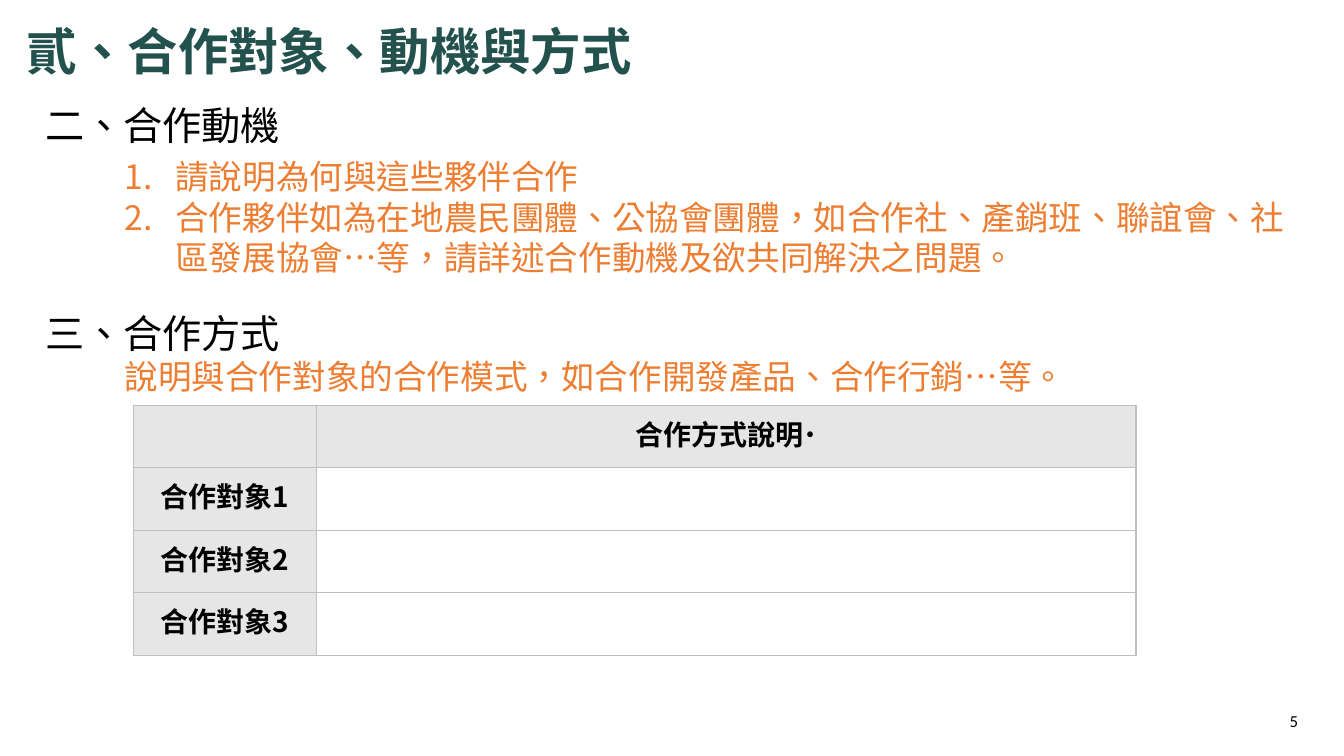
from pptx import Presentation
from pptx import util as u
from pptx.dml.color import RGBColor
from pptx.enum import text as t
from pptx.oxml.ns import qn
from lxml import etree

INK = RGBColor(0x00, 0x00, 0x00)
TEAL = RGBColor(0x23, 0x51, 0x4D)
ORANGE = RGBColor(0xED, 0x7D, 0x31)
GREY = RGBColor(0xE7, 0xE6, 0xE6)
WHITE = RGBColor(0xFF, 0xFF, 0xFF)
EDGE = RGBColor(0xBF, 0xBF, 0xBF)
SANS = "Noto Sans CJK SC"
MID = t.MSO_ANCHOR.MIDDLE
CENTER = t.PP_ALIGN.CENTER


def write(para, words, size, color, bold=False, face=SANS):
    para.line_spacing = u.Pt(round(size * 1.2, 1))
    run = para.add_run()
    run.text = words
    font = run.font
    font.size, font.bold, font.name = u.Pt(size), bold, face
    font.color.rgb = color
    props = run._r.get_or_add_rPr()
    props.set("lang", "zh-TW")
    latin = props.find(qn("a:latin"))
    east = etree.Element(qn("a:ea"), typeface=face)
    latin.addnext(east)


def indent(para, left, first):
    props = para._p.get_or_add_pPr()
    props.set("marL", str(u.Cm(left)))
    props.set("indent", str(u.Cm(first)))
    return props


def add_box(slide, box, wrap=True):
    frame = slide.shapes.add_textbox(*map(u.Cm, box)).text_frame
    frame.word_wrap = wrap
    return frame


def add_line(slide, box, words, size, color, bold=False):
    frame = add_box(slide, box, wrap=False)
    write(frame.paragraphs[0], words, size, color, bold)
    return frame


def add_list(slide, box, items):
    frame = add_box(slide, box)
    for i, words in enumerate(items):
        para = frame.add_paragraph() if i else frame.paragraphs[0]
        props = indent(para, 1.27, -1.27)
        etree.SubElement(props, qn("a:buFont"), typeface="+mj-lt")
        etree.SubElement(props, qn("a:buAutoNum"), type="arabicPeriod")
        write(para, words, 24, ORANGE)


def add_mode(slide, box, head, body):
    frame = add_box(slide, box)
    write(frame.paragraphs[0], head, 28, INK)
    para = frame.add_paragraph()
    indent(para, 0, 2)
    write(para, body, 24, ORANGE)


def style_cell(cell, fill):
    cell.margin_left = cell.margin_right = u.Cm(0.18)
    cell.margin_top = cell.margin_bottom = 0
    cell.vertical_anchor = MID
    props = cell._tc.get_or_add_tcPr()
    for side in ("lnL", "lnR", "lnT", "lnB"):
        line = etree.SubElement(props, qn("a:" + side), w=str(u.Pt(1)))
        solid = etree.SubElement(line, qn("a:solidFill"))
        etree.SubElement(solid, qn("a:srgbClr"), val=str(EDGE))
    cell.fill.solid()
    cell.fill.fore_color.rgb = fill


def add_grid(slide, box, rows, split):
    grid = slide.shapes.add_table(len(rows), 2, *map(u.Cm, box)).table
    wide, high = box[2:]
    grid.columns[0].width = u.Cm(split)
    grid.columns[1].width = u.Cm(wide - split)
    for r, row in enumerate(rows):
        grid.rows[r].height = u.Cm(high / len(rows))
        for c, words in enumerate(row):
            cell = grid.cell(r, c)
            style_cell(cell, GREY if r == 0 or c == 0 else WHITE)
            if words:
                para = cell.text_frame.paragraphs[0]
                para.alignment = CENTER
                write(para, words, 20, INK, True)


def add_page(slide, box, number):
    frame = add_box(slide, box)
    frame.vertical_anchor = MID
    para = frame.paragraphs[0]
    para.alignment = CENTER
    write(para, number, 12, INK, face="Calibri")


def main():
    deck = Presentation()
    deck.slide_width, deck.slide_height = u.Cm(33.87), u.Cm(19.05)
    slide = deck.slides.add_slide(deck.slide_layouts[6])
    add_line(slide, (0.89, 2.44, 6.5, 1.45), "二、合作動機", 28, INK)
    add_list(slide, (2.9, 3.81, 29.72, 3.33), (
        "請說明為何與這些夥伴合作",
        "合作夥伴如為在地農民團體、公協會團體，如合作社、產銷班、聯誼會、"
        "社區發展協會…等，請詳述合作動機及欲共同解決之問題。",
    ))
    add_line(slide, (0.43, 0.38, 16.23, 1.8), "貳、合作對象、動機與方式", 36, TEAL, True)
    add_mode(slide, (0.89, 7.67, 29.69, 2.49), "三、合作方式",
             "說明與合作對象的合作模式，如合作開發產品、合作行銷…等。")
    rows = [("", "合作方式說明˙")]
    rows += [(f"合作對象{n}", "") for n in range(1, 4)]
    add_grid(slide, (3.36, 10.21, 25.27, 6.3), rows, 4.62)
    add_page(slide, (31.85, 17.65, 1.52, 1.02), "5")
    deck.save("out.pptx")


if __name__ == "__main__":
    main()
